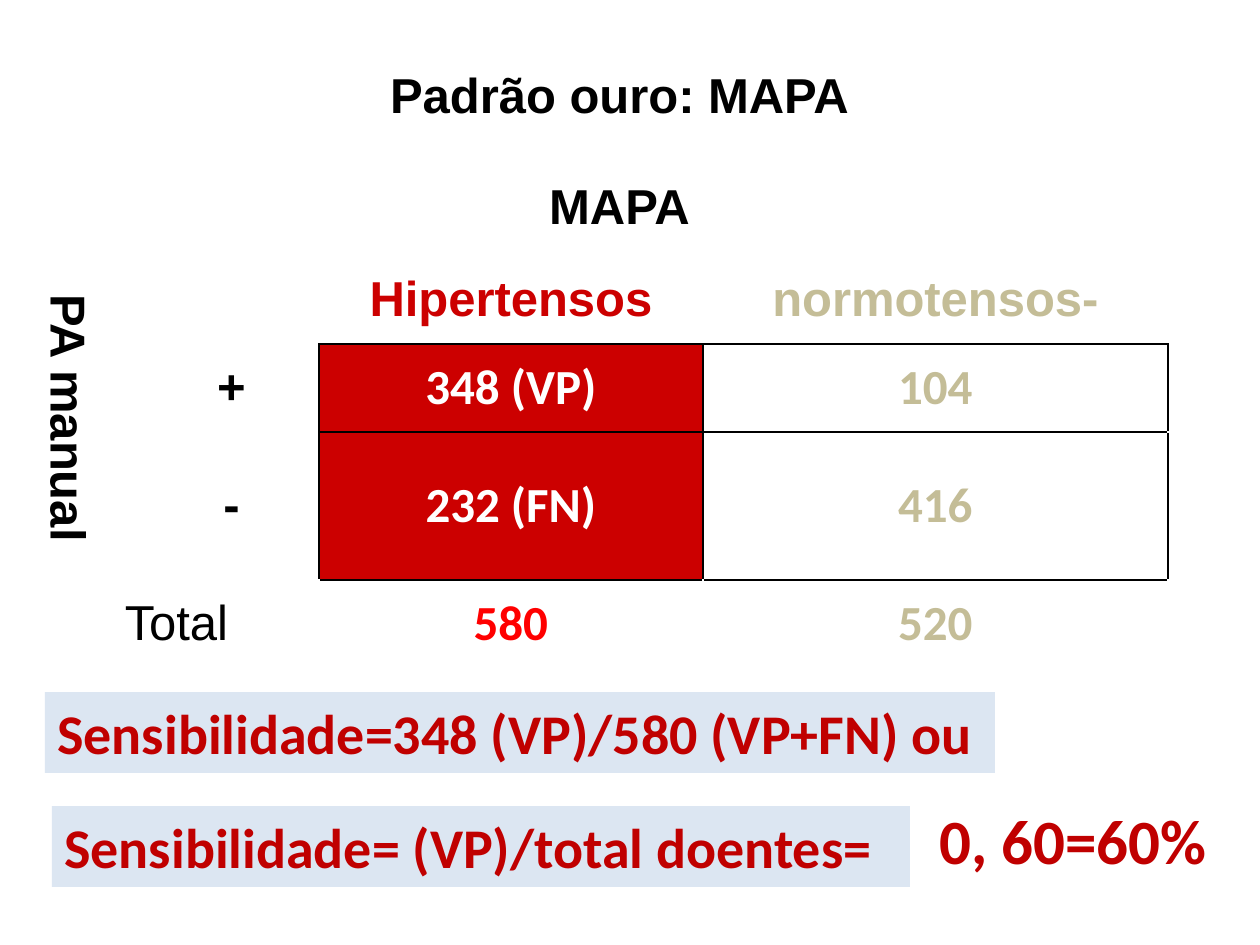
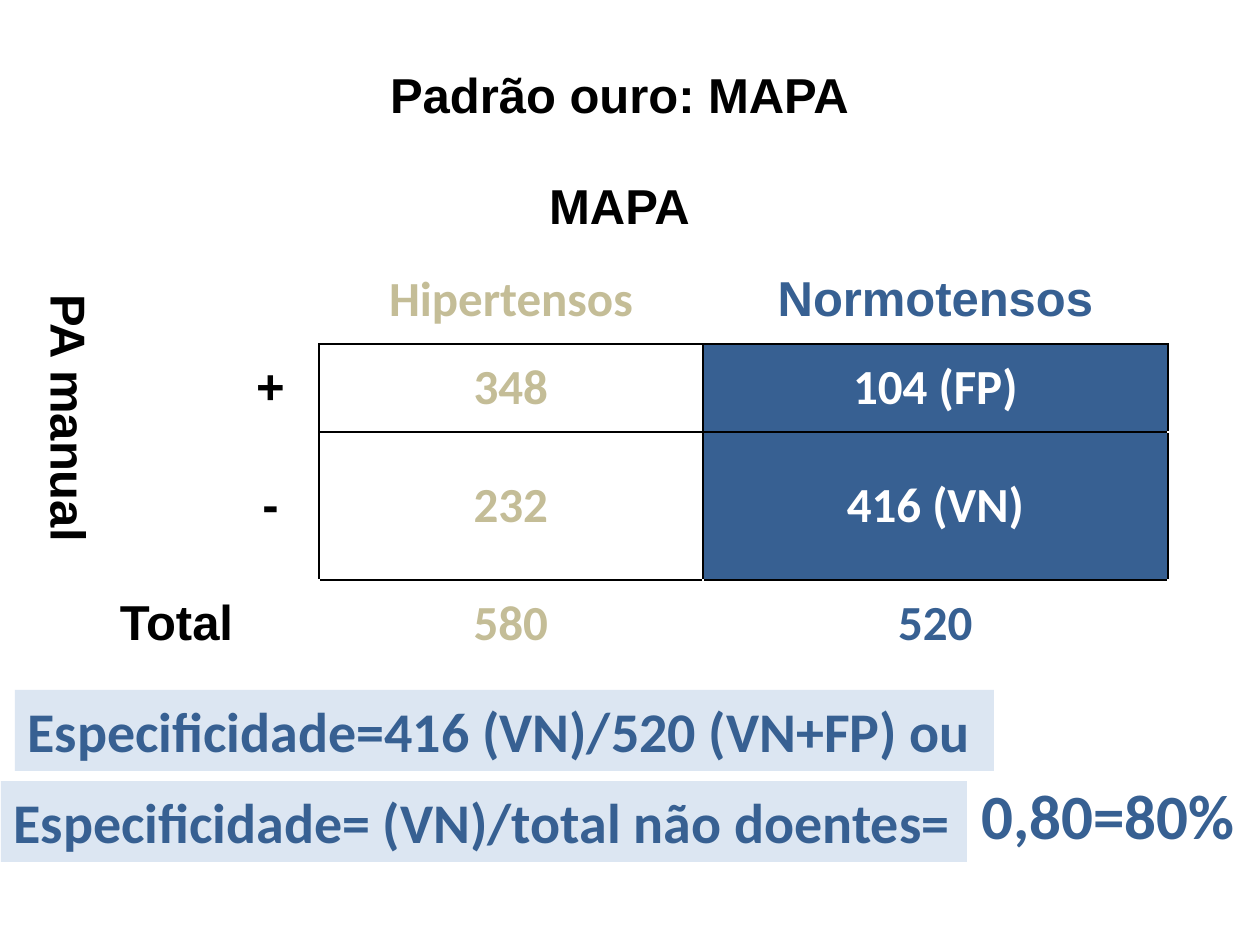
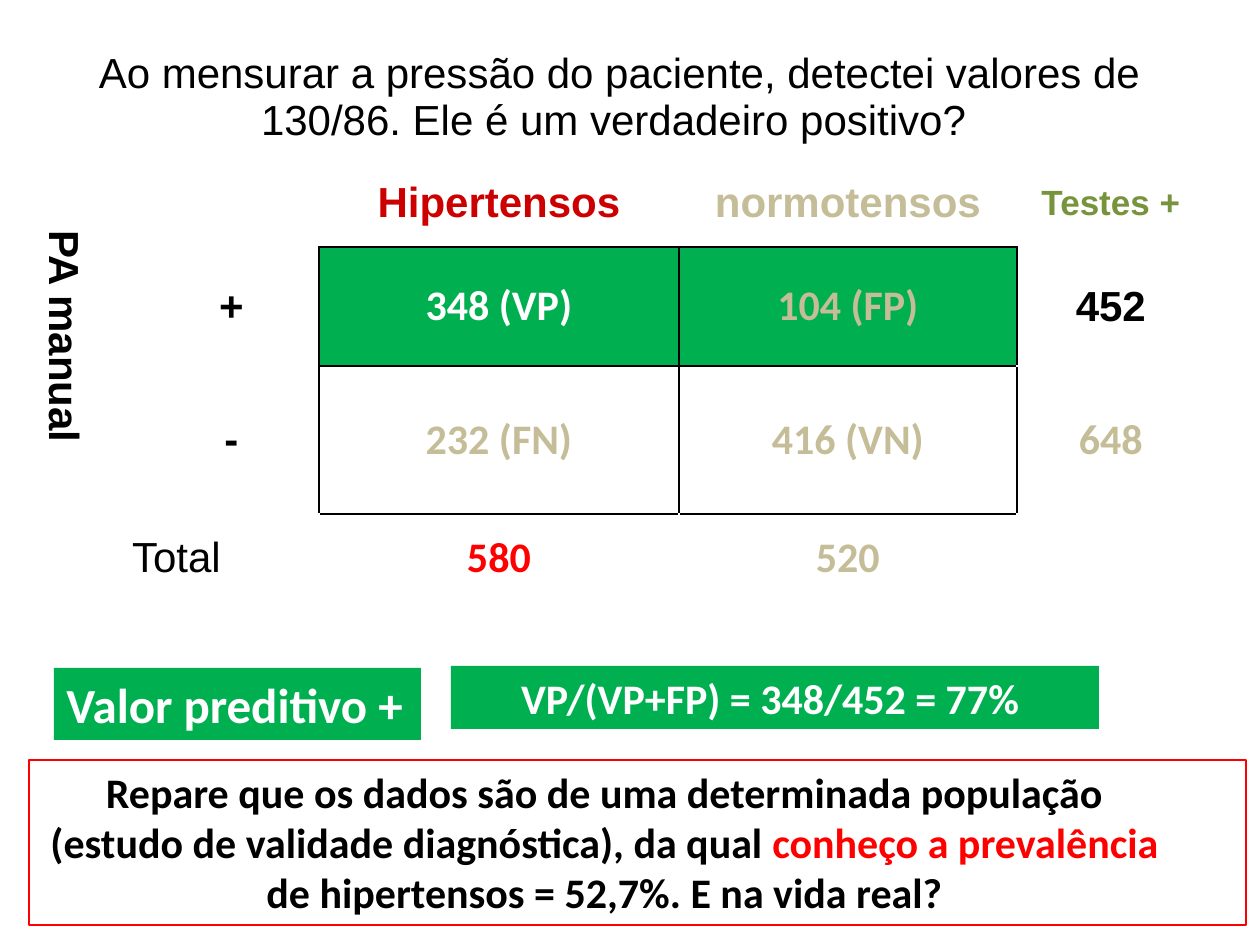
import lxml.etree
import pptx
import pptx.dml.color
import pptx.enum.text
import pptx.oxml.ns
import pptx.util

PX = 914400 // 126
ALIGN = pptx.enum.text.PP_ALIGN


class Theme:
    white, black = "FFFFFF", "000000"
    muted = "C4BD97"
    sick, formula, alert = "CC0000", "C00000", "FF0000"
    healthy = "376092"
    positive, positive_label = "00B050", "77933C"
    panel = "DCE6F2"
    label_font, value_font = "Arial", "Calibri"
    note, body, heading, expression, result = 20, 24, 28, 32, 36


def add_run(para, text, font, size, colour, bold=True):
    span = para.add_run()
    span.text = text
    span.font.name = font
    span.font.size = pptx.util.Pt(size)
    span.font.bold = bold
    span.font.color.rgb = pptx.dml.color.RGBColor.from_string(colour)


def add_border(cell, side, colour):
    """Draw one 1 pt edge of a table cell; side is L, R, T or B."""
    edge = lxml.etree.SubElement(
        cell._tc.get_or_add_tcPr(), pptx.oxml.ns.qn("a:ln" + side), w="12700")
    solid = lxml.etree.SubElement(edge, pptx.oxml.ns.qn("a:solidFill"))
    lxml.etree.SubElement(solid, pptx.oxml.ns.qn("a:srgbClr"), val=colour)


LABEL, VALUE = Theme.label_font, Theme.value_font
SIDES = {"L": (0, -1), "R": (0, 1), "T": (-1, 0), "B": (1, 0)}

# grid rows: header, test +, test -, total; columns from the first count onwards.
# Each entry is (text, font, colour) with an optional fill.
slides = [
    {
        "banners": ["Padrão ouro: MAPA", "MAPA"],
        "banner_bold": True, "total_bold": False, "size": Theme.heading,
        "columns": [110, 175, 384, 465, 37],
        "rows": [124, 97, 88, 88, 148, 88],
        "grid": [
            [("Hipertensos", LABEL, Theme.sick), ("normotensos-", LABEL, Theme.muted)],
            [("348 (VP)", VALUE, Theme.white, Theme.sick), ("104", VALUE, Theme.muted)],
            [("232 (FN)", VALUE, Theme.white, Theme.sick), ("416", VALUE, Theme.muted)],
            [("580", VALUE, Theme.alert), ("520", VALUE, Theme.muted)],
        ],
        "boxes": [
            ((52, 806, 858, 81), "Sensibilidade= (VP)/total doentes=",
             Theme.expression, Theme.formula, Theme.panel),
            ((927, 795, 295, 89), "0, 60=60%", Theme.result, Theme.formula, None),
            ((45, 692, 950, 81), "Sensibilidade=348 (VP)/580 (VP+FN) ou",
             Theme.expression, Theme.formula, Theme.panel),
        ],
    },
    {
        "banners": ["Padrão ouro: MAPA", "MAPA"],
        "banner_bold": True, "total_bold": True, "size": Theme.heading,
        "columns": [188, 97, 384, 465, 37],
        "rows": [124, 97, 88, 88, 148, 88],
        "grid": [
            [("Hipertensos", VALUE, Theme.muted), ("Normotensos", LABEL, Theme.healthy)],
            [("348", VALUE, Theme.muted), ("104 (FP)", VALUE, Theme.white, Theme.healthy)],
            [("232", VALUE, Theme.muted), ("416 (VN)", VALUE, Theme.white, Theme.healthy)],
            [("580", VALUE, Theme.muted), ("520", VALUE, Theme.healthy)],
        ],
        "boxes": [
            ((15, 690, 979, 81), "Especificidade=416 (VN)/520 (VN+FP) ou",
             Theme.expression, Theme.healthy, Theme.panel),
            ((969, 770, 281, 89), "0,80=80%", Theme.result, Theme.healthy, None),
            ((1, 781, 966, 81), "Especificidade= (VN)/total não doentes=",
             Theme.expression, Theme.healthy, Theme.panel),
        ],
    },
    {
        "banners": ["Ao mensurar a pressão do paciente, detectei valores de 130/86. "
                    "Ele é um verdadeiro positivo? "],
        "banner_bold": False, "total_bold": False, "size": Theme.body,
        "columns": [110, 175, 360, 338, 188],
        "rows": [124, 88, 119, 148, 88],
        "grid": [
            [("Hipertensos", LABEL, Theme.sick), ("normotensos", LABEL, Theme.muted),
             ("Testes +", LABEL, Theme.positive_label)],
            [("348 (VP)", VALUE, Theme.white, Theme.positive),
             ("104 (FP)", VALUE, Theme.muted, Theme.positive), ("452", LABEL, Theme.black)],
            [("232 (FN)", VALUE, Theme.muted), ("416 (VN)", VALUE, Theme.muted),
             ("648", VALUE, Theme.muted)],
            [("580", VALUE, Theme.alert), ("520", VALUE, Theme.muted)],
        ],
        "boxes": [
            ((54, 668, 367, 72), "Valor preditivo +",
             Theme.heading, Theme.white, Theme.positive),
            ((451, 666, 648, 63), "VP/(VP+FP) = 348/452 = 77% ",
             Theme.body, Theme.white, Theme.positive),
        ],
    },
]

deck = pptx.Presentation()
deck.slide_width, deck.slide_height = 1260 * PX, 945 * PX

for content in slides:
    page = deck.slides.add_slide(deck.slide_layouts[6])
    columns, rows, size = content["columns"], content["rows"], content["size"]
    table = page.shapes.add_table(
        len(rows), len(columns), 34 * PX, 35 * PX,
        sum(columns) * PX, sum(rows) * PX).table
    table.first_row = table.horz_banding = False
    for column, width in zip(table.columns, columns):
        column.width = width * PX
    for row, height in zip(table.rows, rows):
        row.height = height * PX

    header = len(content["banners"])
    total = header + 3
    counts = {(r, c) for r in (header + 1, header + 2) for c in (2, 3)}

    # (row, column): text, font, colour, fill, bold, size
    entries = {}
    for r, banner in enumerate(content["banners"]):
        entries[r, 0] = (banner, LABEL, Theme.black, Theme.white, content["banner_bold"], size)
        table.cell(r, 0).merge(table.cell(r, len(columns) - 1))
    entries[header, 0] = ("PA manual", LABEL, Theme.black, Theme.white, True, size)
    table.cell(header, 0).merge(table.cell(header + 2, 0))
    entries[total, 0] = ("Total", LABEL, Theme.black, Theme.white, content["total_bold"], size)
    table.cell(total, 0).merge(table.cell(total, 1))
    for r, sign in enumerate("+-", header + 1):
        entries[r, 1] = (sign, LABEL, Theme.black, Theme.white, True, size)
    for r, line in enumerate(content["grid"], header):
        for c, (text, font, colour, *fill) in enumerate(line, 2):
            text_size = Theme.note if text == "Testes +" else size
            entries[r, c] = (text, font, colour, *(fill or [Theme.white]), True, text_size)

    for r in range(len(rows)):
        for c in range(len(columns)):
            cell = table.cell(r, c)
            for side, (down, right) in SIDES.items():
                if counts & {(r, c), (r + down, c + right)}:
                    add_border(cell, side, Theme.black)
            cell.fill.solid()
            fill = Theme.white
            if (r, c) in entries:
                text, font, colour, fill, bold, text_size = entries[r, c]
                para = cell.text_frame.paragraphs[0]
                para.alignment = ALIGN.CENTER
                cell.vertical_anchor = pptx.enum.text.MSO_ANCHOR.MIDDLE
                add_run(para, text, font, text_size, colour, bold)
            cell.fill.fore_color.rgb = pptx.dml.color.RGBColor.from_string(fill)
    table.cell(header, 0)._tc.get_or_add_tcPr().set("vert", "vert")

    for place, text, text_size, colour, fill in content["boxes"]:
        box = page.shapes.add_textbox(*(length * PX for length in place))
        box.text_frame.word_wrap = True
        para = box.text_frame.paragraphs[0]
        para.alignment = ALIGN.CENTER if text_size == Theme.body else ALIGN.LEFT
        add_run(para, text, VALUE, text_size, colour)
        if fill:
            box.fill.solid()
            box.fill.fore_color.rgb = pptx.dml.color.RGBColor.from_string(fill)

# Closing question on the last slide
question = page.shapes.add_textbox(29 * PX, 760 * PX, 1217 * PX, 165 * PX)
question.line.color.rgb = pptx.dml.color.RGBColor.from_string(Theme.alert)
question.line.width = pptx.util.Pt(0.75)
frame = question.text_frame
frame.word_wrap = True
opening, rest = frame.paragraphs[0], frame.add_paragraph()
opening.alignment = rest.alignment = ALIGN.CENTER
opening._p.get_or_add_pPr().set("marR", str(66 * PX))
for para, text, colour in [
    (opening, "Repare que os dados são de uma determinada população", Theme.black),
    (rest, "(estudo de validade diagnóstica), da qual ", Theme.black),
    (rest, "conheço a prevalência ", Theme.alert),
    (rest, "de hipertensos = 52,7%. E na vida real?", Theme.black),
]:
    add_run(para, text, VALUE, Theme.body, colour)

deck.save("out.pptx")
